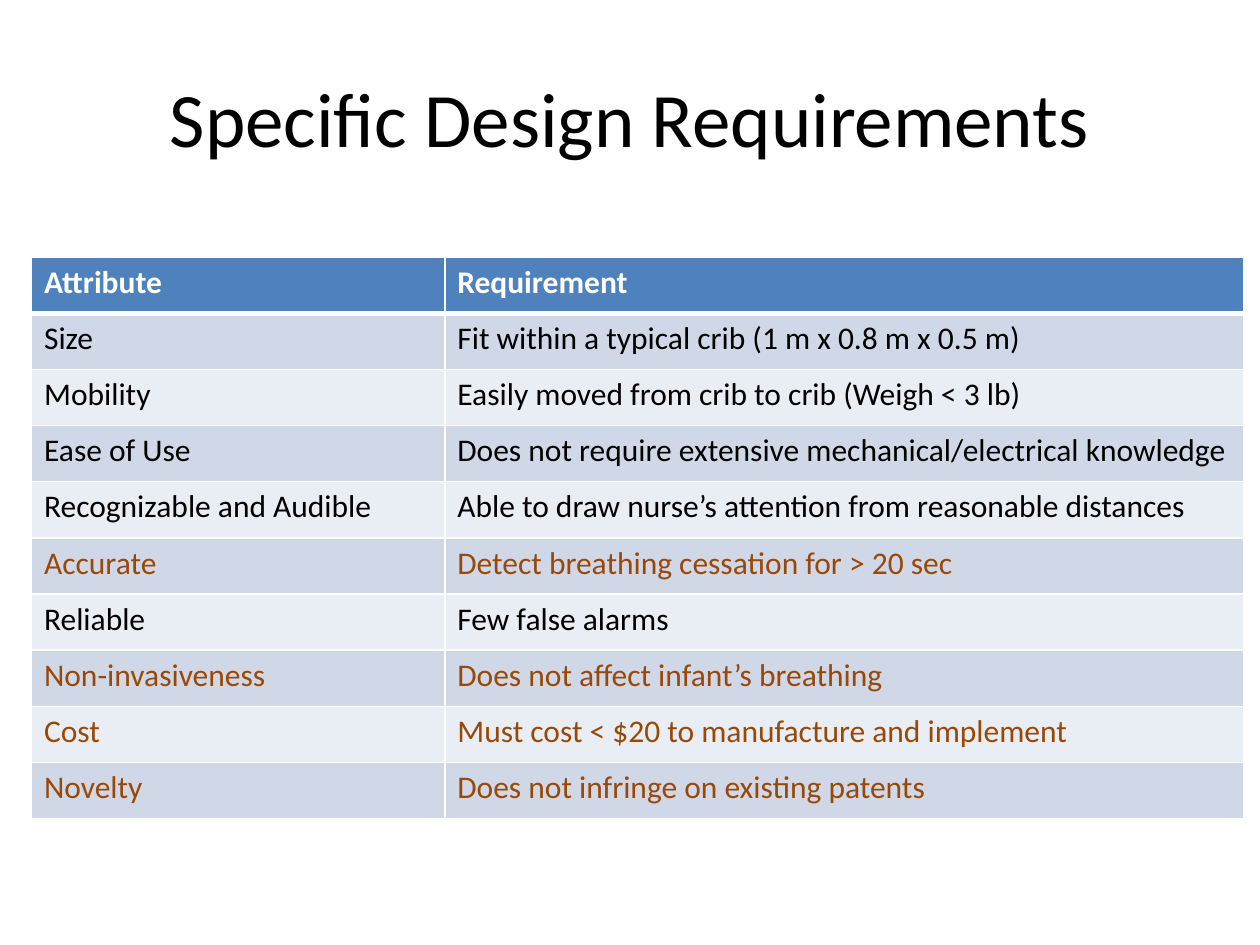
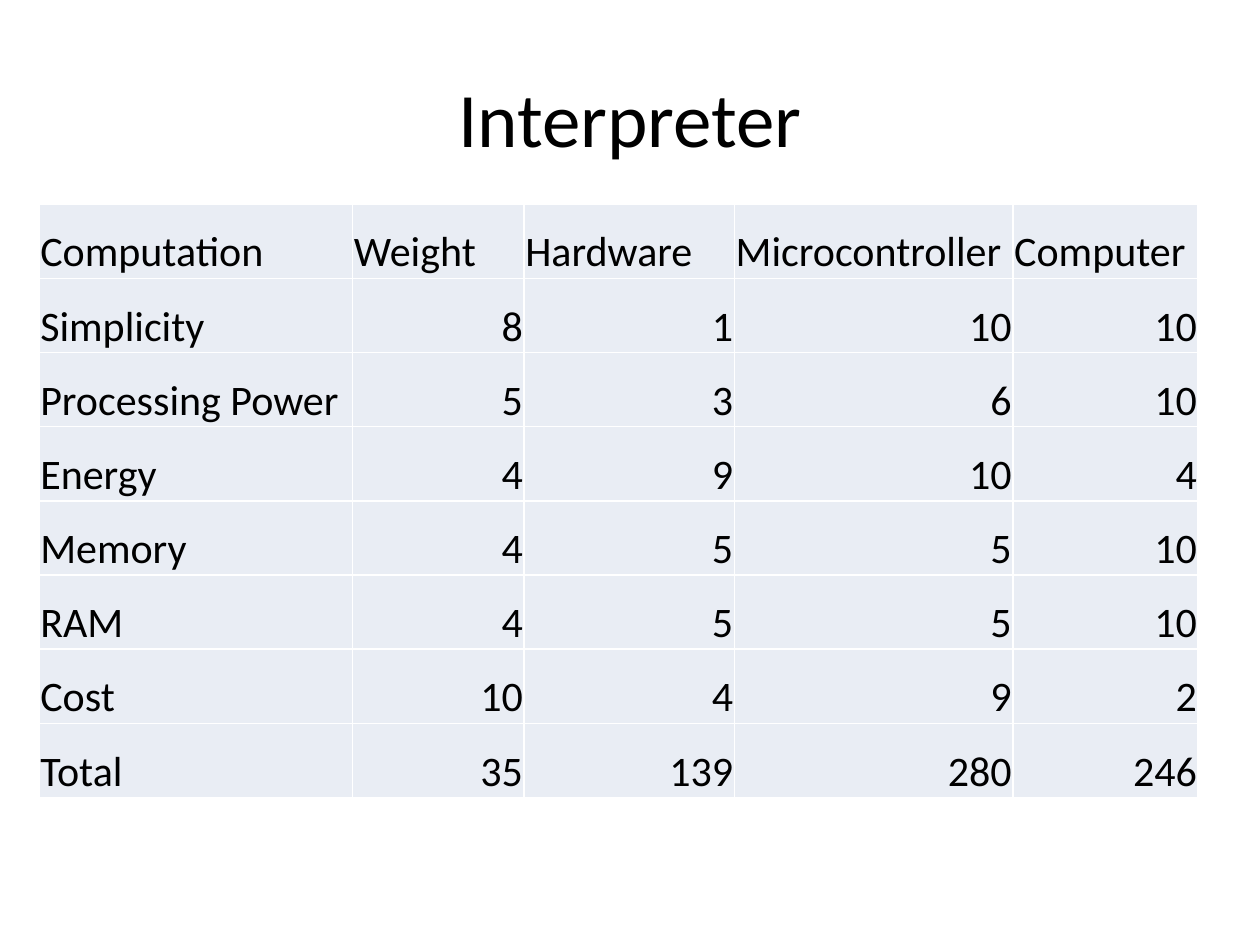
from lxml import etree
from pptx import Presentation
from pptx.dml.color import RGBColor
from pptx.enum.text import MSO_ANCHOR, PP_ALIGN
from pptx.oxml.ns import qn
from pptx.util import Inches, Pt

LEFT, CENTER, RIGHT = PP_ALIGN.LEFT, PP_ALIGN.CENTER, PP_ALIGN.RIGHT
TOP, MIDDLE, BOTTOM = MSO_ANCHOR.TOP, MSO_ANCHOR.MIDDLE, MSO_ANCHOR.BOTTOM

# Content
REQUIREMENTS_TITLE = "Specific Design Requirements"
REQUIREMENTS = [
    ("Attribute", "Requirement"),
    ("Size", "Fit within a typical crib (1 m x 0.8 m x 0.5 m)"),
    ("Mobility", "Easily moved from crib to crib (Weigh < 3 lb)"),
    ("Ease of Use", "Does not require extensive mechanical/electrical knowledge"),
    ("Recognizable and Audible", "Able to draw nurse’s attention from reasonable distances"),
    ("Accurate", "Detect breathing cessation for > 20 sec"),
    ("Reliable", "Few false alarms"),
    ("Non-invasiveness", "Does not affect infant’s breathing"),
    ("Cost", "Must cost < $20 to manufacture and implement"),
    ("Novelty", "Does not infringe on existing patents"),
]
HIGHLIGHTED = {"Accurate", "Non-invasiveness", "Cost", "Novelty"}

INTERPRETER_TITLE = "Interpreter"
SCORES = [
    ("Computation", "Weight", "Hardware", "Microcontroller", "Computer"),
    ("Simplicity", 8, 1, 10, 10),
    ("Processing Power", 5, 3, 6, 10),
    ("Energy", 4, 9, 10, 4),
    ("Memory", 4, 5, 5, 10),
    ("RAM", 4, 5, 5, 10),
    ("Cost", 10, 4, 9, 2),
    ("Total", 35, 139, 280, 246),
]

# Shared look
FONT = "Calibri"
BLACK, WHITE, BROWN = "000000", "FFFFFF", "984807"
HEADER_BLUE, DARK_BAND, LIGHT_BAND = "4F81BD", "D0D8E8", "E9EDF4"
THIN, THICK = 1, 3


def color(hex_string):
    return RGBColor.from_string(hex_string)


def add_span(para, text, size, ink, bold=False):
    span = para.add_run()
    span.text = str(text)
    span.font.name = FONT
    span.font.size = Pt(size)
    span.font.bold = bold
    span.font.color.rgb = color(ink)


def add_page(deck, title):
    page = deck.slides.add_slide(deck.slide_layouts[5])
    box = page.shapes.title
    box.left, box.top = Inches(0.5), Inches(0.3)
    box.width, box.height = Inches(9), Inches(1.25)
    box.text_frame.vertical_anchor = MIDDLE
    para = box.text_frame.paragraphs[0]
    para.alignment = CENTER
    add_span(para, title, 44, BLACK)
    return page


def add_grid(page, rows, left, top, height, widths):
    """Add a plain table with equal rows."""
    frame = page.shapes.add_table(len(rows), len(widths), Inches(left), Inches(top),
                                  Inches(sum(widths)), Inches(height))
    table = frame.table
    table.first_row = table.horz_banding = False
    for column, width in zip(table.columns, widths):
        column.width = Inches(width)
    for row in table.rows:
        row.height = Inches(height / len(rows))
    return table


def set_borders(cell, top=THIN, bottom=THIN):
    properties = cell._tc.get_or_add_tcPr()
    for side, width in (("L", THIN), ("R", THIN), ("T", top), ("B", bottom)):
        line = etree.SubElement(properties, qn(f"a:ln{side}"), w=str(Pt(width)))
        fill = etree.SubElement(line, qn("a:solidFill"))
        etree.SubElement(fill, qn("a:srgbClr"), val=WHITE)


def fill_cell(cell, text, size, ink, fill, bold=False, align=LEFT, anchor=TOP,
              top=THIN, bottom=THIN):
    set_borders(cell, top, bottom)
    cell.fill.solid()
    cell.fill.fore_color.rgb = color(fill)
    cell.vertical_anchor = anchor
    para = cell.text_frame.paragraphs[0]
    para.alignment = align
    add_span(para, text, size, ink, bold)


def add_requirements(deck):
    page = add_page(deck, REQUIREMENTS_TITLE)
    table = add_grid(page, REQUIREMENTS, 0.25, 2.04, 4.46, (3.28, 6.34))
    for r, row in enumerate(REQUIREMENTS):
        header = r == 0
        if header:
            ink, fill = WHITE, HEADER_BLUE
        else:
            ink = BROWN if row[0] in HIGHLIGHTED else BLACK
            fill = DARK_BAND if r % 2 else LIGHT_BAND
        for c, text in enumerate(row):
            fill_cell(table.cell(r, c), text, 18, ink, fill, bold=header,
                      top=THICK if r == 1 else THIN,
                      bottom=THICK if header else THIN)


def add_interpreter(deck):
    page = add_page(deck, INTERPRETER_TITLE)
    table = add_grid(page, SCORES, 0.31, 1.62, 4.71, (2.49, 1.36, 1.67, 2.21, 1.47))
    for r, row in enumerate(SCORES):
        for c, value in enumerate(row):
            cell = table.cell(r, c)
            cell.margin_left = cell.margin_top = cell.margin_right = Inches(0.01)
            cell.margin_bottom = 0
            fill_cell(cell, value, 24, BLACK, LIGHT_BAND, anchor=BOTTOM,
                      align=RIGHT if isinstance(value, int) else LEFT)


def main():
    deck = Presentation()
    deck.slide_width, deck.slide_height = Inches(10), Inches(7.5)
    add_requirements(deck)
    add_interpreter(deck)
    deck.save("out.pptx")


if __name__ == "__main__":
    main()
